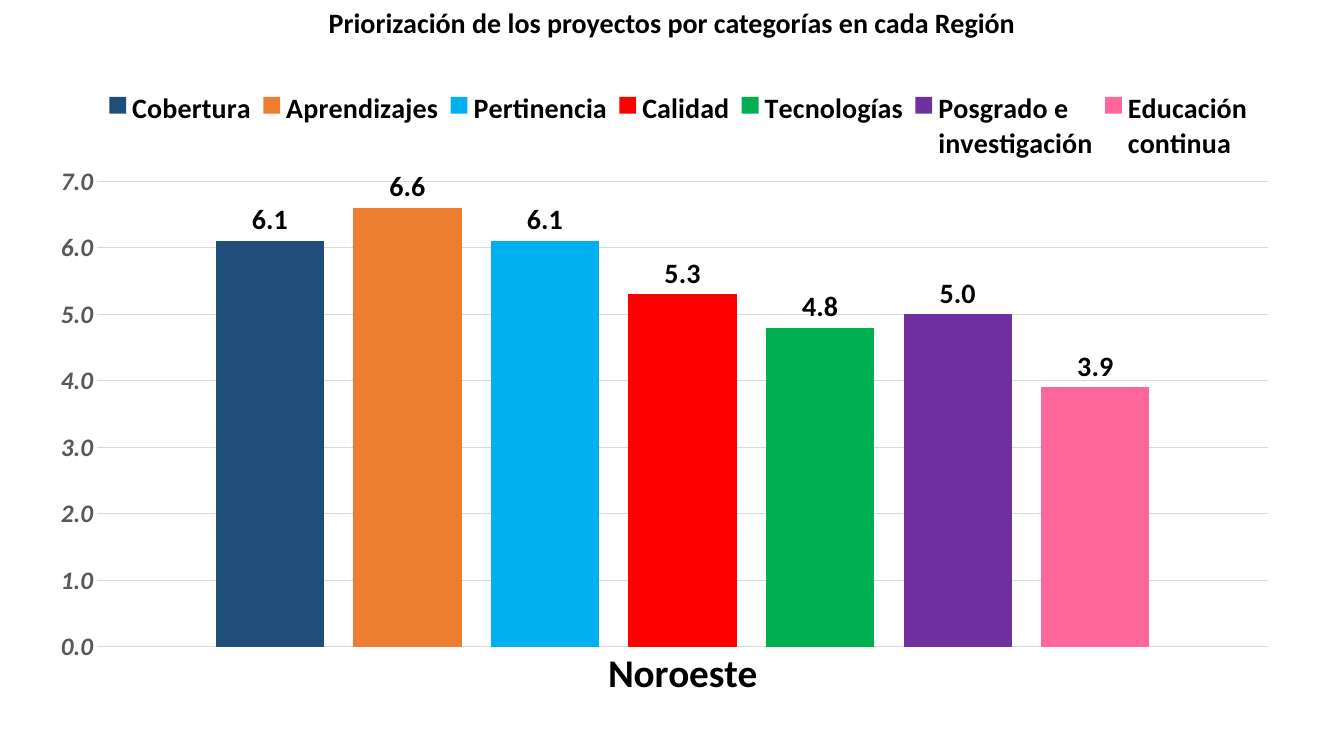
from dataclasses import dataclass

from lxml import etree
from pptx import Presentation
from pptx.chart.data import CategoryChartData
from pptx.dml.color import RGBColor
from pptx.enum.chart import XL_CHART_TYPE, XL_LABEL_POSITION, XL_LEGEND_POSITION, XL_TICK_MARK
from pptx.enum.text import PP_ALIGN
from pptx.oxml.ns import qn
from pptx.util import Pt

COLUMNS = XL_CHART_TYPE.COLUMN_CLUSTERED
OUTSIDE_END = XL_LABEL_POSITION.OUTSIDE_END
LEGEND_BOTTOM = XL_LEGEND_POSITION.BOTTOM
NO_TICKS = XL_TICK_MARK.NONE
CENTER = PP_ALIGN.CENTER


@dataclass(frozen=True)
class Theme:
    font: str = "Calibri"
    text: str = "000000"
    axis_text: str = "595959"
    grid: str = "D9D9D9"
    body_size: int = 20
    axis_size: int = 18
    region_size: int = 28


THEME = Theme()
TITLE = "Priorización de los proyectos por categorías en cada Región"
REGION = "Noroeste"
CATEGORIES = [
    ("Cobertura", 6.1, "1F4E79"),
    ("Aprendizajes", 6.6, "ED7D31"),
    ("Pertinencia", 6.1, "00B0F0"),
    ("Calidad", 5.3, "FF0000"),
    ("Tecnologías", 4.8, "00B050"),
    ("Posgrado e\ninvestigación", 5.0, "7030A0"),
    ("Educación\ncontinua", 3.9, "FF6699"),
]


def style_font(font, size, color=THEME.text, italic=False):
    font.name = THEME.font
    font.size = Pt(size)
    font.bold = True
    font.italic = italic
    font.color.rgb = RGBColor.from_string(color)


def style_line(line):
    line.color.rgb = RGBColor.from_string(THEME.grid)
    line.width = Pt(0.75)


def set_layout(parent, index, left, top, width, height, inner=False):
    """Place a chart part by fractions of the chart's size."""
    for old in parent.findall(qn("c:layout")):
        parent.remove(old)
    layout = etree.Element(qn("c:layout"))
    manual = etree.SubElement(layout, qn("c:manualLayout"))
    settings = [("xMode", "edge"), ("yMode", "edge"),
                ("x", left), ("y", top), ("w", width), ("h", height)]
    if inner:
        settings.insert(0, ("layoutTarget", "inner"))
    for tag, value in settings:
        etree.SubElement(manual, qn(f"c:{tag}")).set("val", str(value))
    parent.insert(index, layout)


def add_title(page):
    box = page.shapes.add_textbox(Pt(0), Pt(0.7), Pt(960), Pt(31.5))
    box.text_frame.word_wrap = True
    para = box.text_frame.paragraphs[0]
    para.text = TITLE
    para.alignment = CENTER
    style_font(para.font, THEME.body_size)


def style_axes(chart):
    region_axis, score_axis = chart.category_axis, chart.value_axis
    for axis in (region_axis, score_axis):
        axis.major_tick_mark = axis.minor_tick_mark = NO_TICKS
    style_font(region_axis.tick_labels.font, THEME.region_size)
    style_line(region_axis.format.line)
    score_axis.minimum_scale, score_axis.maximum_scale = 0, 7
    score_axis.major_unit = 1
    score_axis.format.line.fill.background()
    style_line(score_axis.major_gridlines.format.line)
    labels = score_axis.tick_labels
    labels.number_format = "0.0"
    labels.number_format_is_linked = False
    style_font(labels.font, THEME.axis_size, THEME.axis_text, italic=True)


def style_columns(plot):
    plot.gap_width = 219
    plot.overlap = -27
    plot.vary_by_categories = False
    for series, (_, _, color) in zip(plot.series, CATEGORIES):
        series.format.fill.solid()
        series.format.fill.fore_color.rgb = RGBColor.from_string(color)
        labels = series.data_labels
        labels.show_value = True
        labels.position = OUTSIDE_END
        labels.number_format = "0.0"
        labels.number_format_is_linked = False
        style_font(labels.font, THEME.body_size)


def add_legend(chart):
    chart.has_legend = True
    legend = chart.legend
    legend.position = LEGEND_BOTTOM
    legend.include_in_layout = False
    style_font(legend.font, THEME.body_size)
    position = legend._element.find(qn("c:legendPos"))
    set_layout(legend._element, legend._element.index(position) + 1, 0.03, 0.04, 0.95, 0.11)


def add_score_chart(page):
    data = CategoryChartData(number_format="0.0")
    data.categories = [REGION]
    for name, score, _ in CATEGORIES:
        data.add_series(name, [score])
    frame = page.shapes.add_chart(COLUMNS, Pt(43.2), Pt(44.6), Pt(874), Pt(478), data)
    chart = frame.chart
    chart.has_title = False
    chart.font.name = THEME.font
    style_axes(chart)
    style_columns(chart.plots[0])
    add_legend(chart)
    plot_area = chart._chartSpace.find(".//" + qn("c:plotArea"))
    set_layout(plot_area, 0, 0.03, 0.178, 0.957, 0.695, inner=True)


def main():
    deck = Presentation()
    deck.slide_width, deck.slide_height = Pt(960), Pt(540)
    page = deck.slides.add_slide(deck.slide_layouts[6])
    add_score_chart(page)
    add_title(page)
    deck.save("out.pptx")


if __name__ == "__main__":
    main()
